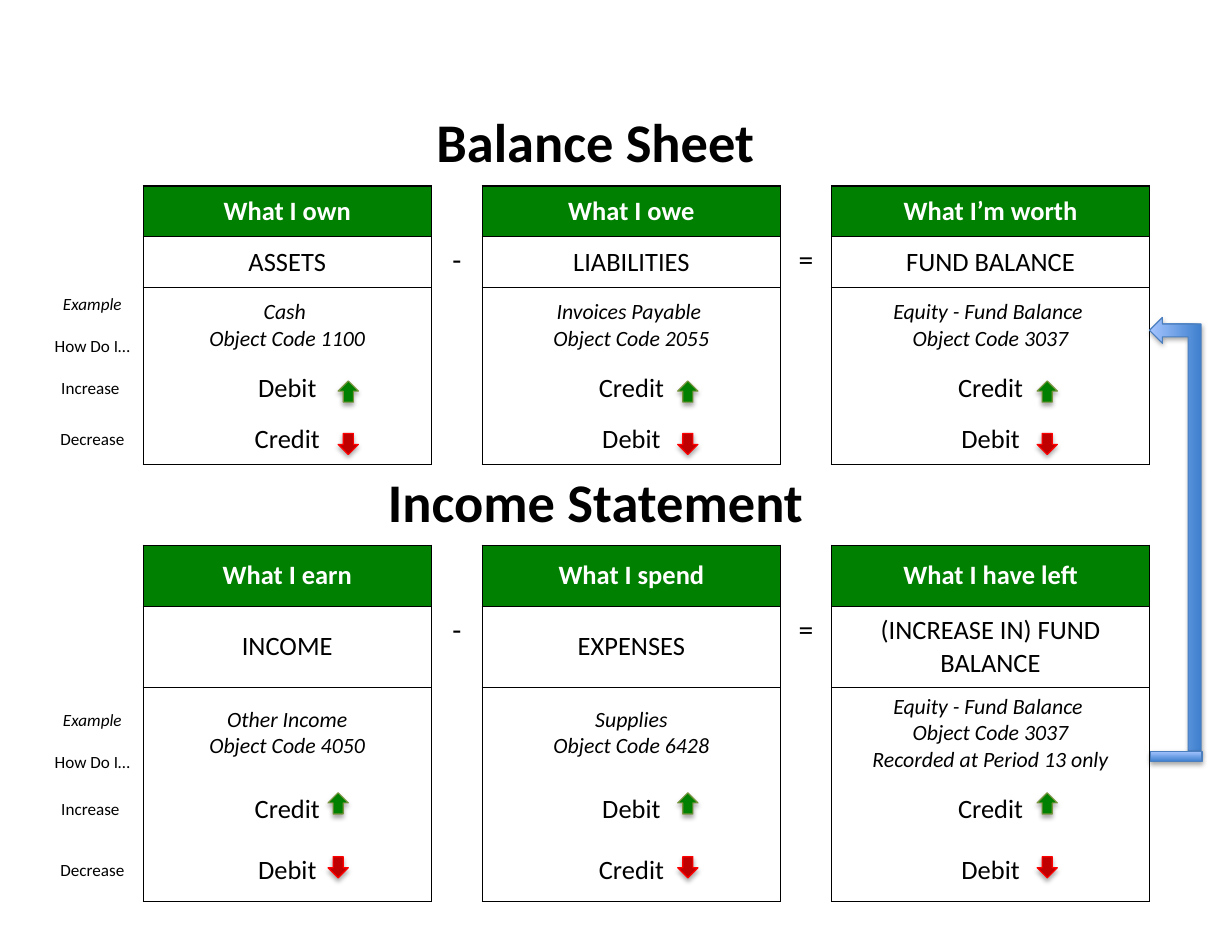
from lxml.etree import SubElement
from pptx import Presentation
from pptx.dml.color import RGBColor
from pptx.enum.shapes import MSO_SHAPE
from pptx.enum.text import MSO_ANCHOR, PP_ALIGN
from pptx.oxml.ns import qn
from pptx.util import Cm, Pt

SIDE = [["Example", "How Do I…"], ["Increase "], ["Decrease"]]
PARTS = [
    ("Balance Sheet", [
        ("What I own", "ASSETS", ["Cash ", "Object Code 1100"], "Debit", "Credit"),
        ("What I owe", "LIABILITIES", ["Invoices Payable ", "Object Code 2055"],
         "Credit", "Debit"),
        ("What I’m worth", "FUND BALANCE",
         ["Equity - Fund Balance ", "Object Code 3037"], "Credit", "Debit"),
    ]),
    ("Income Statement", [
        ("What I earn", "INCOME", ["Other Income", "Object Code 4050"],
         "Credit", "Debit"),
        ("What I spend", "EXPENSES", ["Supplies", "Object Code 6428"],
         "Debit", "Credit"),
        ("What I have left", "(INCREASE IN) FUND BALANCE",
         ["Equity - Fund Balance ", "Object Code 3037",
          "Recorded at Period 13 only"], "Credit", "Debit"),
    ]),
]
SIGNS = ["-", "="]
COLS = [2.31, 6.53, 1.16, 6.76, 1.16, 7.21]
ROWS = [1.83, 1.15, 1.15, 1.72, 1.15, 1.15, 1.83, 1.39, 1.83, 2.08, 1.39, 1.39]
LEFT, TOP = 0.94, 2.39
MARKS = [([7.67, 15.37, 23.52], 8.64, 9.83), ([7.44, 15.37, 23.52], 17.98, 19.43)]
BLACK, WHITE, GREEN, RED = "000000", "FFFFFF", "008000", "C00000"
BLUES = ["3F80CE", "A4C4FF"]


def tint(code):
    return RGBColor.from_string(code)


def write(cell, lines, size, color=BLACK, bold=False, slant=(), gap=0,
          anchor=MSO_ANCHOR.MIDDLE):
    cell.vertical_anchor = anchor
    frame = cell.text_frame
    for i, line in enumerate(lines):
        para = frame.add_paragraph() if i else frame.paragraphs[0]
        para.alignment = PP_ALIGN.CENTER
        if i and gap:
            para.space_before = Pt(gap)
        run = para.add_run()
        run.text = line
        font = run.font
        font.name, font.size, font.bold = "Calibri", Pt(size), bold
        font.italic = i in slant
        font.color.rgb = tint(color)


def edge(cell, sides):
    props = cell._tc.get_or_add_tcPr()
    for side in sides:
        line = SubElement(props, qn("a:ln" + side), w=str(Pt(1)))
        fill = SubElement(line, qn("a:solidFill"))
        SubElement(fill, qn("a:srgbClr"), val=BLACK)


def shade(shape):
    shape.shadow.inherit = False
    glow = shape._element.spPr.find(qn("a:effectLst"))
    drop = SubElement(glow, qn("a:outerShdw"), blurRad=str(Pt(3.1)),
                      dist=str(Pt(1.8)), dir="5400000", rotWithShape="0")
    color = SubElement(drop, qn("a:srgbClr"), val=BLACK)
    SubElement(color, qn("a:alpha"), val="35000")


def draw(slide, kind, box, fill, line):
    shape = slide.shapes.add_shape(kind, *map(Cm, box))
    if isinstance(fill, list):
        shape.fill.gradient()
        shape.fill.gradient_angle = 90
        for stop, code in zip(shape.fill.gradient_stops, fill):
            stop.color.rgb = tint(code)
    else:
        shape.fill.solid()
        shape.fill.fore_color.rgb = tint(fill)
    shape.line.color.rgb = tint(line)
    shape.line.width = Pt(0.75)
    shade(shape)
    return shape


def fill_part(table, top, title, cards):
    head = table.cell(top, 0)
    head.merge(table.cell(top, 5))
    write(head, [title], 35, bold=True, anchor=MSO_ANCHOR.TOP)
    write(table.cell(top + 3, 0), SIDE[0], 11, slant=(0,), gap=13.4,
          anchor=MSO_ANCHOR.BOTTOM)
    for i in (1, 2):
        write(table.cell(top + 3 + i, 0), SIDE[i], 11)
    for i, sign in enumerate(SIGNS):
        write(table.cell(top + 2, 2 + 2 * i), [sign], 19, anchor=MSO_ANCHOR.TOP)
    for i, (name, kind, sample, more, less) in enumerate(cards):
        cells = [table.cell(top + 1 + j, 1 + 2 * i) for j in range(5)]
        for cell, sides in zip(cells, ["LRTB", "LRT", "LR", "LR", "LRB"]):
            edge(cell, sides)
        write(cells[0], [name], 17, WHITE, bold=True)
        write(cells[2], sample, 14, slant=range(3))
        for j, text in ((1, kind), (3, more), (4, less)):
            write(cells[j], [text], 17)


def main():
    deck = Presentation()
    deck.slide_width, deck.slide_height = Cm(27.94), Cm(21.59)
    slide = deck.slides.add_slide(deck.slide_layouts[6])
    frame = slide.shapes.add_table(len(ROWS), len(COLS), Cm(LEFT), Cm(TOP),
                                   Cm(sum(COLS)), Cm(sum(ROWS)))
    table = frame.table
    table.first_row = table.horz_banding = False
    style = table._tbl.tblPr.find(qn("a:tableStyleId"))
    style.text = "{2D5ABB26-0587-4C30-8999-92F81FD0307C}"
    for col, wide in zip(table.columns, COLS):
        col.width = Cm(wide)
    for row, high in zip(table.rows, ROWS):
        row.height = Cm(high)
    for i, (title, cards) in enumerate(PARTS):
        fill_part(table, 6 * i, title, cards)
    for r in range(len(ROWS)):
        for c in range(len(COLS)):
            fill = table.cell(r, c).fill
            if r % 6 == 1 and c % 2:
                fill.solid()
                fill.fore_color.rgb = tint(GREEN)
            else:
                fill.background()
    for lefts, high, low in MARKS:
        for x in lefts:
            draw(slide, MSO_SHAPE.DOWN_ARROW, (x, low, 0.46, 0.48), RED, "FF0000")
            draw(slide, MSO_SHAPE.UP_ARROW, (x, high, 0.46, 0.48), GREEN, "77933C")
    bend = draw(slide, MSO_SHAPE.BENT_UP_ARROW, (21.74, 11.53, 9.83, 1.17),
                BLUES, "4B7EBC")
    bend.rotation = 270
    draw(slide, MSO_SHAPE.RECTANGLE, (26.09, 17.04, 1.17, 0.23), BLUES, "4B7EBC")
    deck.save("out.pptx")


if __name__ == "__main__":
    main()
